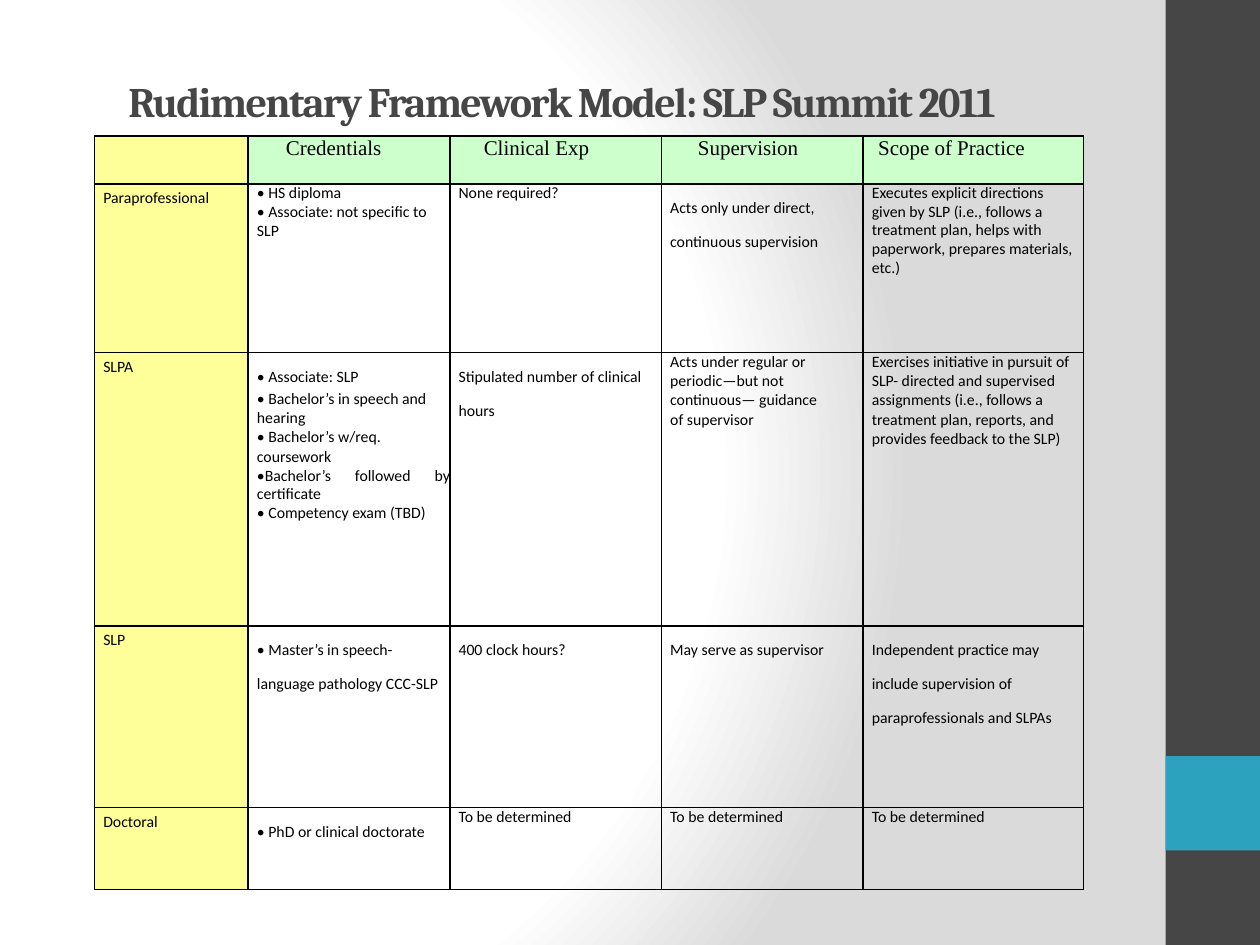
from pptx import Presentation
from pptx.dml.color import RGBColor
from pptx.enum.shapes import MSO_SHAPE
from pptx.enum.text import MSO_ANCHOR, PP_ALIGN
from pptx.oxml import parse_xml
from pptx.oxml.ns import nsdecls
from pptx.util import Inches, Pt

COLORS = {
    "dark": "464646", "accent": "2DA2BF", "black": "000000",
    "label": "FFFF99", "header": "CCFFCC", "white": "FFFFFF", "gray": "DADADA",
}

TITLE = "Rudimentary Framework Model: SLP Summit 2011"
HEADERS = [  # text, left indent
    ("", 0), ("Credentials", 0.3), ("Clinical Exp", 0.27),
    ("Supervision", 0.29), ("Scope of Practice", 0.12),
]
COLUMN_WIDTHS = [1.22, 1.6, 1.68, 1.6, 1.75]
ROW_HEIGHTS = [0.38, 1.34, 2.17, 1.44, 0.65]

# Line spacings: exact points for fixed ones, a factor for the others
FIXED, LOOSE, SINGLE, TIGHT = Pt(13.6), Pt(19.3), 1.0, 0.97

# Each cell lists its paragraphs as (text, line spacing)
ROWS = [
    ("Paraprofessional", [
        [("• HS diploma", SINGLE), ("• Associate: not specific to SLP", TIGHT)],
        [("None required?", SINGLE)],
        [("Acts only under direct, continuous supervision", LOOSE)],
        [("Executes explicit directions given by SLP (i.e., follows a treatment plan, "
          "helps with paperwork, prepares materials, etc.)", TIGHT)],
    ]),
    ("SLPA", [
        [("• Associate: SLP", LOOSE),
         ("• Bachelor’s in speech and hearing", SINGLE),
         ("• Bachelor’s w/req. \vcoursework", SINGLE),
         ("•Bachelor’s followed by certificate", TIGHT),
         ("• Competency exam (TBD)", TIGHT)],
        [("Stipulated number of clinical hours", LOOSE)],
        [("Acts under regular or periodic—but not continuous— guidance of supervisor",
          SINGLE)],
        [("Exercises initiative in pursuit of SLP- directed and supervised assignments "
          "(i.e., follows a treatment plan, reports, and provides feedback to the SLP)",
          SINGLE)],
    ]),
    ("SLP", [
        [("• Master’s in speech-language pathology CCC-SLP", LOOSE)],
        [("400 clock hours?", LOOSE)],
        [("May serve as supervisor", LOOSE)],
        [("Independent practice may include supervision of paraprofessionals and SLPAs",
          LOOSE)],
    ]),
    ("Doctoral", [
        [("• PhD or clinical doctorate", LOOSE)],
        *[[("To be determined", SINGLE)]] * 3,
    ]),
]
JUSTIFIED = "•Bachelor’s followed by certificate"
CELL_INDENT = 0.07
RIGHT_MARGINS = [0, 0, 0, 0.28, 0.04]


def rgb(name):
    return RGBColor.from_string(COLORS[name])


def set_background(slide):
    """Radial gradient, white at the left and gray at the right."""
    stops = "".join(
        f'<a:gs pos="{position * 1000}"><a:srgbClr val="{COLORS[name]}"/></a:gs>'
        for position, name in [(0, "white"), (75, "white"), (100, "gray")])
    slide.element.cSld.insert(0, parse_xml(
        f'<p:bg {nsdecls("p", "a")}><p:bgPr><a:gradFill rotWithShape="1">'
        f'<a:gsLst>{stops}</a:gsLst><a:path path="circle">'
        '<a:fillToRect l="20000" t="50000" r="100000" b="50000"/></a:path>'
        '</a:gradFill><a:effectLst/></p:bgPr></p:bg>'))


def add_block(slide, top, height, color):
    block = slide.shapes.add_shape(
        MSO_SHAPE.RECTANGLE, Inches(9.25), Inches(top), Inches(0.75), Inches(height))
    block.shadow.inherit = False
    block.fill.solid()
    block.fill.fore_color.rgb = rgb(color)
    block.line.fill.background()


def add_title(slide):
    box = slide.shapes.add_textbox(Inches(0.92), Inches(0.17), Inches(7.75), Inches(1.25))
    frame = box.text_frame
    frame.word_wrap = True
    frame.vertical_anchor = MSO_ANCHOR.MIDDLE
    paragraph = frame.paragraphs[0]
    paragraph.text = TITLE
    font = paragraph.font
    font.name, font.size, font.bold = "Cambria", Pt(24), True
    font.color.rgb = rgb("dark")
    paragraph.runs[0].font._element.set("spc", "-100")


def fill_cell(cell, paragraphs, font_name, size, indent, right=0, fill=None):
    cell.margin_left, cell.margin_right = Inches(indent), Inches(right)
    cell.margin_top = cell.margin_bottom = 0
    if fill:
        cell.fill.solid()
        cell.fill.fore_color.rgb = rgb(fill)
    else:
        cell.fill.background()
    for index, side in enumerate("LRTB"):
        cell._tc.tcPr.insert(index, parse_xml(
            f'<a:ln{side} {nsdecls("a")} w="12700"><a:solidFill>'
            f'<a:srgbClr val="{COLORS["black"]}"/></a:solidFill></a:ln{side}>'))
    frame = cell.text_frame
    for index, (text, spacing) in enumerate(paragraphs):
        paragraph = frame.add_paragraph() if index else frame.paragraphs[0]
        paragraph.text = text
        paragraph.line_spacing = spacing
        paragraph.alignment = PP_ALIGN.JUSTIFY if text == JUSTIFIED else PP_ALIGN.LEFT
        if index and paragraphs[index - 1][1] == LOOSE:
            paragraph.space_before = Pt(1.8)
        paragraph.font.name, paragraph.font.size = font_name, Pt(size)
        paragraph.font.color.rgb = rgb("black")


def add_framework_table(slide):
    table = slide.shapes.add_table(
        len(ROW_HEIGHTS), len(COLUMN_WIDTHS), Inches(0.75), Inches(1.08),
        Inches(sum(COLUMN_WIDTHS)), Inches(sum(ROW_HEIGHTS))).table
    table.first_row = table.horz_banding = False
    for column, width in zip(table.columns, COLUMN_WIDTHS):
        column.width = Inches(width)
    for row, height in zip(table.rows, ROW_HEIGHTS):
        row.height = Inches(height)
    for column, (text, indent) in enumerate(HEADERS):
        fill_cell(table.cell(0, column), [(text, FIXED)], "Times New Roman", 12, indent,
                  fill="header" if text else "label")
    for row, (label, cells) in enumerate(ROWS, 1):
        for column, paragraphs in enumerate([[(label, FIXED)], *cells]):
            fill_cell(table.cell(row, column), paragraphs, "Calibri", 9, CELL_INDENT,
                      RIGHT_MARGINS[column], None if column else "label")


def main():
    presentation = Presentation()
    presentation.slide_width, presentation.slide_height = Inches(10), Inches(7.5)
    slide = presentation.slides.add_slide(presentation.slide_layouts[6])
    set_background(slide)
    add_block(slide, 0, 7.5, "dark")
    add_block(slide, 6, 0.75, "accent")
    add_framework_table(slide)
    add_title(slide)
    presentation.save("out.pptx")


if __name__ == "__main__":
    main()
